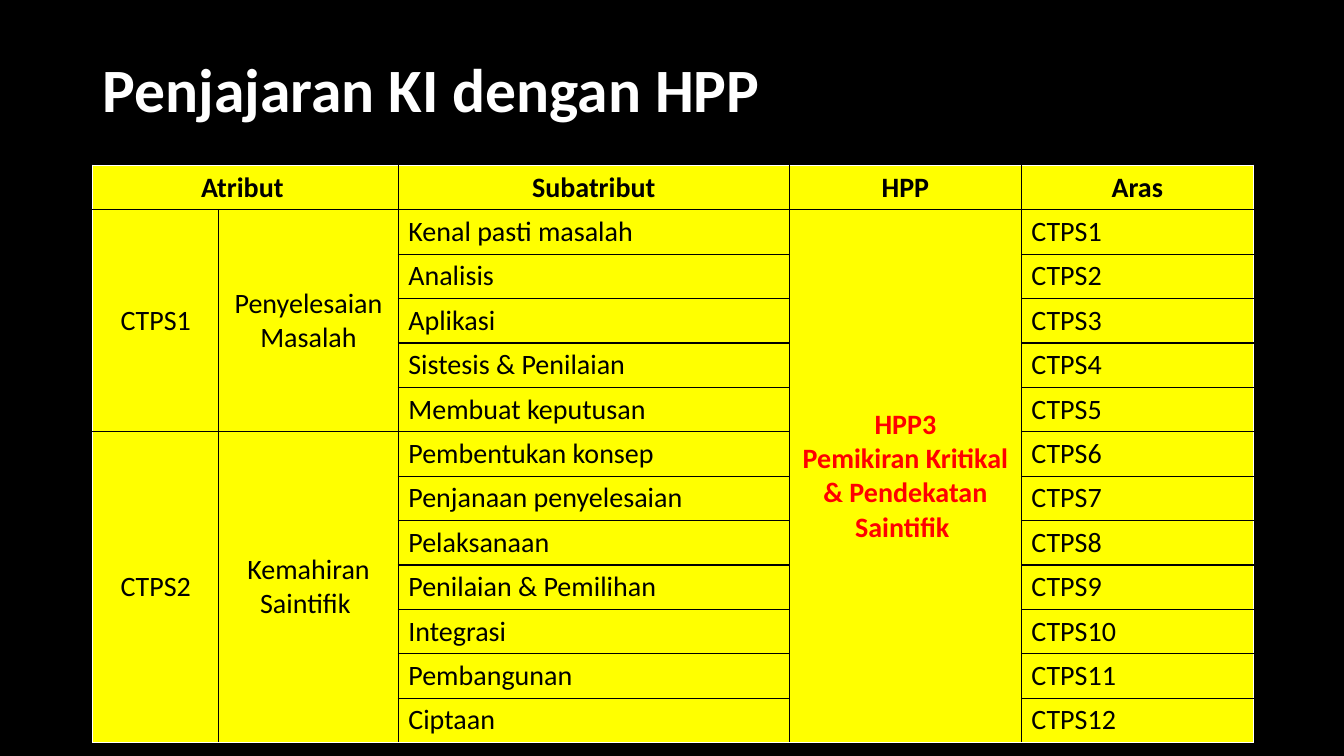
import pptx
import pptx.dml.color
import pptx.enum.text
import pptx.oxml
import pptx.oxml.ns
import pptx.util

PX = 9144
BLACK, WHITE, YELLOW, RED = "000000", "FFFFFF", "FFFF00", "FF0000"
NO_STYLE = "{2D5ABB26-0587-4C30-8999-92F81FD0307C}"
CENTER = pptx.enum.text.PP_ALIGN.CENTER
LEFT = pptx.enum.text.PP_ALIGN.LEFT
MIDDLE = pptx.enum.text.MSO_ANCHOR.MIDDLE

COLUMN_WIDTHS = [125, 178, 388, 230, 230]
ROW_HEIGHT = 44
HEADERS = {0: "Atribut ", 2: "Subatribut", 3: "HPP", 4: "Aras"}
ATTRIBUTES = [
    ("CTPS1", "Penyelesaian\nMasalah", [
        "Kenal pasti masalah", "Analisis", "Aplikasi",
        "Sistesis & Penilaian", "Membuat keputusan"]),
    ("CTPS2", "Kemahiran Saintifik ", [
        "Pembentukan konsep", "Penjanaan penyelesaian", "Pelaksanaan",
        "Penilaian & Pemilihan", "Integrasi", "Pembangunan", "Ciptaan"]),
]
OUTCOME = "HPP3\nPemikiran Kritikal & Pendekatan Saintifik "


def paint(color, value):
    color.rgb = pptx.dml.color.RGBColor.from_string(value)


def write(frame, text, size=20, color=BLACK, bold=False, align=LEFT, spacing=None):
    frame.text = text
    for para in frame.paragraphs:
        para.alignment = align
        para.line_spacing = spacing
        for span in para.runs:
            span.font.name = "Calibri"
            span.font.size = pptx.util.Pt(size)
            span.font.bold = bold
            paint(span.font.color, color)


def add_border(cell, side, color):
    namespace = pptx.oxml.ns.nsdecls("a")
    cell._tc.get_or_add_tcPr().append(pptx.oxml.parse_xml(
        f'<a:ln{side} {namespace} w="12700"><a:solidFill>'
        f'<a:srgbClr val="{color}"/></a:solidFill></a:ln{side}>'))


def style_cells(table):
    last_row, last_column = len(table.rows), len(table.columns)
    for row in range(last_row):
        for column in range(last_column):
            cell = table.cell(row, column)
            if not cell.is_spanned:
                height = cell.span_height if cell.is_merge_origin else 1
                width = cell.span_width if cell.is_merge_origin else 1
                rims = {"L": column == 0, "R": column + width == last_column,
                        "T": row == 0, "B": row + height == last_row}
                for side, on_rim in rims.items():
                    add_border(cell, side, WHITE if on_rim else BLACK)
            cell.fill.solid()
            paint(cell.fill.fore_color, YELLOW)


def merge_down(table, row, column, count, text, **style):
    cell = table.cell(row, column)
    cell.merge(table.cell(row + count - 1, column))
    cell.vertical_anchor = MIDDLE
    write(cell.text_frame, text, align=CENTER, **style)


def add_title(page, left, top, width, height):
    title = page.shapes.title
    title.left, title.top = left * PX, top * PX
    title.width, title.height = width * PX, height * PX
    title.text_frame.vertical_anchor = MIDDLE
    write(title.text_frame, "Penjajaran KI dengan HPP", size=44,
          color=WHITE, bold=True, spacing=0.9)


def add_alignment_table(page, left, top):
    level_count = sum(len(names) for _, _, names in ATTRIBUTES)
    row_count = level_count + 1
    frame = page.shapes.add_table(
        row_count, len(COLUMN_WIDTHS), left * PX, top * PX,
        sum(COLUMN_WIDTHS) * PX, row_count * ROW_HEIGHT * PX)
    table = frame.table
    table._tbl.tblPr.find(pptx.oxml.ns.qn("a:tableStyleId")).text = NO_STYLE
    for column, width in zip(table.columns, COLUMN_WIDTHS):
        column.width = width * PX

    table.cell(0, 0).merge(table.cell(0, 1))
    for column, text in HEADERS.items():
        write(table.cell(0, column).text_frame, text, bold=True, align=CENTER)

    merge_down(table, 1, 3, level_count, OUTCOME, color=RED, bold=True)
    row = 1
    for code, attribute, names in ATTRIBUTES:
        merge_down(table, row, 0, len(names), code)
        merge_down(table, row, 1, len(names), attribute)
        for name in names:
            write(table.cell(row, 2).text_frame, name)
            write(table.cell(row, 4).text_frame, f"CTPS{row}")
            row += 1
    style_cells(table)


def main():
    deck = pptx.Presentation()
    deck.slide_width, deck.slide_height = 1333 * PX, 750 * PX
    page = deck.slides.add_slide(deck.slide_layouts[5])
    page.background.fill.solid()
    paint(page.background.fill.fore_color, BLACK)
    add_title(page, 92, 40, 1150, 104)
    add_alignment_table(page, 92, 164)
    deck.save("out.pptx")


if __name__ == "__main__":
    main()
